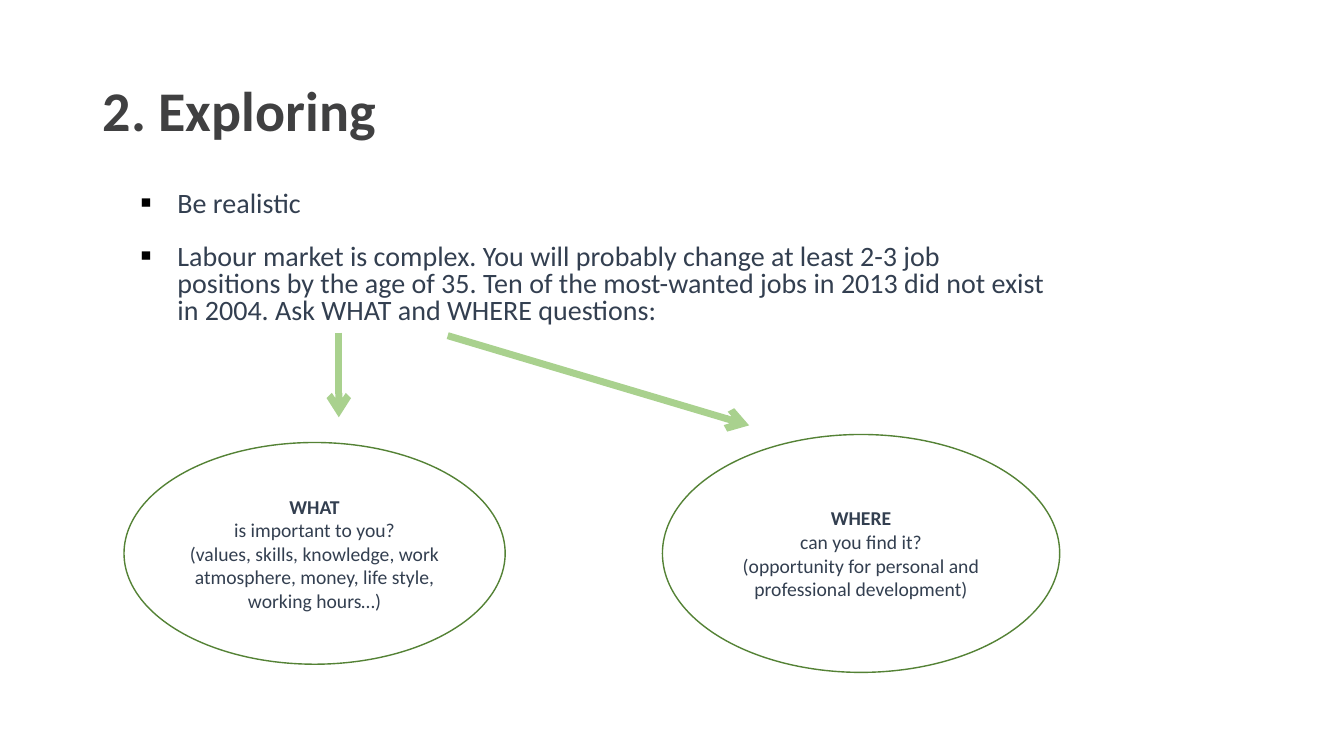
from lxml.etree import SubElement as add_element
from pptx import Presentation
from pptx.dml.color import RGBColor
from pptx.enum.shapes import MSO_CONNECTOR as Connector, MSO_SHAPE as Shape
from pptx.enum.text import MSO_ANCHOR as Anchor, MSO_AUTO_SIZE as AutoSize, PP_ALIGN as Align
from pptx.oxml.ns import qn
from pptx.util import Inches, Pt

INK, TITLE_INK, OUTLINE, ARROW = "333F50", "404041", "548235", "A9D18E"
QUESTIONS = [
    ((9.23, 58.53, 28.36, 29.33),
     ["WHAT", "is important to you?",
      "(values, skills, knowledge, work atmosphere, money, life style, working hours…)"]),
    ((49.29, 57.47, 29.56, 31.47),
     ["WHERE", "can you find it?",
      "(opportunity for personal and professional development)"]),
]
ARROWS = [((25.21, 44), (25.21, 55.2)), ((33.31, 44.4), (55.74, 56.27))]
ADVICE = [
    "Be realistic",
    "Labour market is complex. You will probably change at least 2-3 job positions by the age "
    "of 35. Ten of the most-wanted jobs in 2013 did not exist in 2004. "
    "Ask WHAT and WHERE questions:",
]


def colour(value):
    """Turn a hex string into a colour."""
    return RGBColor.from_string(value)


def add_bullet(para):
    """Give a paragraph a hanging black square bullet."""
    props = para._p.get_or_add_pPr()
    props.set("marL", str(Inches(0.37)))
    props.set("indent", str(-Inches(0.37)))
    tint = add_element(props, qn("a:buClr"))
    add_element(tint, qn("a:srgbClr"), val="000000")
    add_element(props, qn("a:buSzPct"), val="120000")
    add_element(props, qn("a:buFont"), typeface="Arial")
    add_element(props, qn("a:buChar"), char="▪")


def write(para, text, size, ink=INK, bold=False, align=Align.LEFT, leading=1.0, before=0,
          bullet=False):
    """Fill a paragraph with formatted text."""
    if bullet:
        add_bullet(para)
    para.alignment, para.line_spacing, para.space_before = align, leading, Pt(before)
    span = para.add_run()
    span.text = text
    span.font.name, span.font.size, span.font.bold = "Calibri", Pt(size), bold
    span.font.color.rgb = colour(ink)


class Page:
    """Hold the current slide and place elements by percentages of its size."""

    def __init__(self, deck):
        """Add a title and content slide."""
        self.width, self.height = deck.slide_width, deck.slide_height
        self.slide = deck.slides.add_slide(deck.slide_layouts[1])

    def point(self, across, down):
        """Convert percentages to slide lengths."""
        return round(self.width * across / 100), round(self.height * down / 100)

    def area(self, left, top, width, height):
        """Convert a box in percentages to slide lengths."""
        return *self.point(left, top), *self.point(width, height)

    def placeholder(self, index, area, anchor):
        """Move a placeholder and return its text frame."""
        box = self.slide.placeholders[index]
        box.left, box.top, box.width, box.height = self.area(*area)
        frame = box.text_frame
        frame.word_wrap, frame.auto_size, frame.vertical_anchor = True, AutoSize.NONE, anchor
        return frame

    def title(self, text, area):
        """Write the slide title."""
        frame = self.placeholder(0, area, Anchor.MIDDLE)
        write(frame.paragraphs[0], text, 40, ink=TITLE_INK, bold=True, leading=0.9)

    def bullets(self, items, area):
        """Write the bulleted list."""
        frame = self.placeholder(1, area, Anchor.TOP)
        for number, item in enumerate(items):
            para = frame.add_paragraph() if number else frame.paragraphs[0]
            write(para, item, 20, leading=0.8, before=19 if number else 0, bullet=True)

    def ellipse(self, lines, area):
        """Draw an outlined ellipse with a bold first line."""
        box = self.slide.shapes.add_shape(Shape.OVAL, *self.area(*area))
        box.shadow.inherit = False
        box.fill.solid()
        box.fill.fore_color.rgb = colour("FFFFFF")
        box.line.color.rgb, box.line.width = colour(OUTLINE), Pt(1)
        frame = box.text_frame
        frame.word_wrap, frame.vertical_anchor = True, Anchor.MIDDLE
        for number, line in enumerate(lines):
            para = frame.add_paragraph() if number else frame.paragraphs[0]
            write(para, line, 14, bold=number == 0, align=Align.CENTER)

    def arrow(self, start, end):
        """Draw a thick arrow between two points."""
        line = self.slide.shapes.add_connector(
            Connector.STRAIGHT, *self.point(*start), *self.point(*end))
        line.line.color.rgb, line.line.width = colour(ARROW), Pt(5)
        add_element(line.line._get_or_add_ln(), qn("a:tailEnd"), type="arrow")
        add_element(line._element.spPr, qn("a:effectLst"))


def main():
    """Build and save the slide."""
    deck = Presentation()
    deck.slide_width, deck.slide_height = Inches(13.33), Inches(7.5)
    page = Page(deck)
    page.title("2. Exploring", (6.9, 5.33, 86.27, 19.33))
    page.bullets(ADVICE, (9.68, 24.67, 69.09, 19.33))
    for area, lines in QUESTIONS:
        page.ellipse(lines, area)
    for start, end in ARROWS:
        page.arrow(start, end)
    deck.save("out.pptx")


if __name__ == "__main__":
    main()
